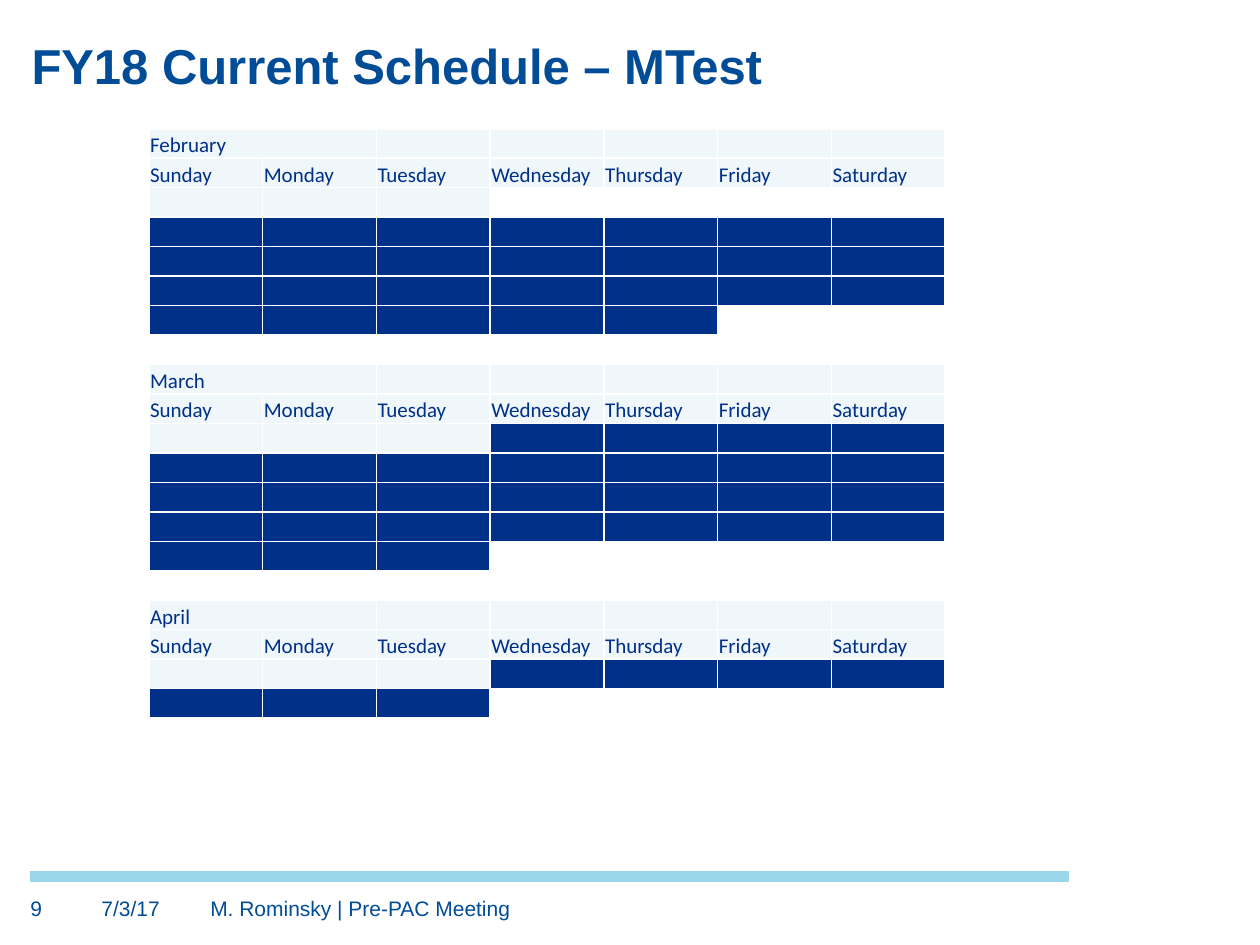
from dataclasses import dataclass

from lxml.etree import SubElement
from pptx import Presentation
from pptx.dml.color import RGBColor
from pptx.enum.shapes import MSO_CONNECTOR
from pptx.enum.text import MSO_ANCHOR, MSO_AUTO_SIZE, PP_ALIGN
from pptx.oxml.ns import qn
from pptx.util import Pt


@dataclass(frozen=True)
class Theme:
    heading: str = "004C97"
    booked: str = "003087"
    pale: str = "EFF7FB"
    border: str = "FFFFFF"
    rule: str = "99D6EA"
    title_size: int = 28
    text_size: int = 12
    text_font: str = "Arial"
    table_font: str = "Calibri"


THEME = Theme()
TITLE = "FY18 Current Schedule – MTest"
DAYS = ["Sunday", "Monday", "Tuesday", "Wednesday", "Thursday", "Friday", "Saturday"]
FULL_WEEK = "BBBBBBB"
FREE_WEEK = "......."
MONTHS = [
    ("February", ["PPP....", FULL_WEEK, FULL_WEEK, FULL_WEEK, "BBBBB.."]),
    ("March", ["PPPBBBB", FULL_WEEK, FULL_WEEK, FULL_WEEK, "BBB...."]),
    ("April", ["PPPBBBB", "BBB....", FREE_WEEK, FREE_WEEK, FREE_WEEK]),
]
FILLS = {"P": THEME.pale, "B": THEME.booked}
FOOTER = [("9", 17.3, 32), ("7/3/17", 58, 53), ("M. Rominsky | Pre-PAC Meeting", 120.2, 493)]

TABLE_LEFT, TABLE_TOP, TABLE_STEP = 85, 73.6, 134.7
TABLE_WIDTH, ROW_HEIGHT = 455, 16.84
FOOTER_TOP, FOOTER_HEIGHT = 512, 19
RULE_LEFT, RULE_RIGHT, RULE_Y = 17.3, 610.6, 501


def place(shape, left, top, width, height):
    shape.left, shape.top, shape.width, shape.height = map(Pt, (left, top, width, height))


def style_font(font, name, size, color, bold=False):
    font.name = name
    font.size = Pt(size)
    font.bold = bold
    font.color.rgb = RGBColor.from_string(color)


def fill_frame(frame, text, size, bold=False):
    frame.text = text
    frame.word_wrap = True
    frame.auto_size = MSO_AUTO_SIZE.NONE
    frame.margin_left = frame.margin_right = frame.margin_top = frame.margin_bottom = 0
    paragraph = frame.paragraphs[0]
    paragraph.alignment = PP_ALIGN.LEFT
    style_font(paragraph.runs[0].font, THEME.text_font, size, THEME.heading, bold)


def add_borders(cell):
    properties = cell._tc.get_or_add_tcPr()
    for side in ("a:lnL", "a:lnR", "a:lnT", "a:lnB"):
        line = SubElement(properties, qn(side), w=str(Pt(1)))
        fill = SubElement(line, qn("a:solidFill"))
        SubElement(fill, qn("a:srgbClr"), val=THEME.border)


def format_cell(cell, text, mark):
    cell.margin_left = cell.margin_right = cell.margin_top = Pt(0.75)
    cell.margin_bottom = 0
    cell.vertical_anchor = MSO_ANCHOR.BOTTOM
    add_borders(cell)
    if mark in FILLS:
        cell.fill.solid()
        cell.fill.fore_color.rgb = RGBColor.from_string(FILLS[mark])
    else:
        cell.fill.background()
    paragraph = cell.text_frame.paragraphs[0]
    if text:
        paragraph.text = text
        style_font(paragraph.runs[0].font, THEME.table_font, THEME.text_size, THEME.booked)
    else:
        SubElement(paragraph._p, qn("a:endParaRPr"), sz=str(THEME.text_size * 100))


def add_month(page, top, month, weeks):
    blank = [""] * len(DAYS)
    rows = [([month] + blank[1:], "PPPPPPP"), (DAYS, "PPPPPPP")]
    rows += [(blank, week) for week in weeks]
    frame = page.shapes.add_table(len(rows), len(DAYS), Pt(TABLE_LEFT), Pt(top),
                                  Pt(TABLE_WIDTH), Pt(ROW_HEIGHT * len(rows)))
    table = frame.table
    table.first_row = table.horz_banding = False
    for row_index, (texts, marks) in enumerate(rows):
        for column_index, (text, mark) in enumerate(zip(texts, marks)):
            format_cell(table.cell(row_index, column_index), text, mark)
    table.cell(0, 0).merge(table.cell(0, 1))


def main():
    deck = Presentation()
    deck.slide_width, deck.slide_height = Pt(720), Pt(540)
    page = deck.slides.add_slide(deck.slide_layouts[5])

    rule = page.shapes.add_connector(MSO_CONNECTOR.STRAIGHT, Pt(RULE_LEFT), Pt(RULE_Y),
                                     Pt(RULE_RIGHT), Pt(RULE_Y))
    rule.line.width = Pt(6)
    rule.line.color.rgb = RGBColor.from_string(THEME.rule)
    SubElement(rule._element.spPr, qn("a:effectLst"))

    title = page.shapes.title
    place(title, 18, 20, 684, 34)
    fill_frame(title.text_frame, TITLE, THEME.title_size, bold=True)
    title.text_frame.vertical_anchor = MSO_ANCHOR.BOTTOM

    for text, left, width in FOOTER:
        box = page.shapes.add_textbox(Pt(left), Pt(FOOTER_TOP), Pt(width), Pt(FOOTER_HEIGHT))
        fill_frame(box.text_frame, text, THEME.text_size)

    for index, (month, weeks) in enumerate(MONTHS):
        add_month(page, TABLE_TOP + index * TABLE_STEP, month, weeks)

    deck.save("out.pptx")


if __name__ == "__main__":
    main()
